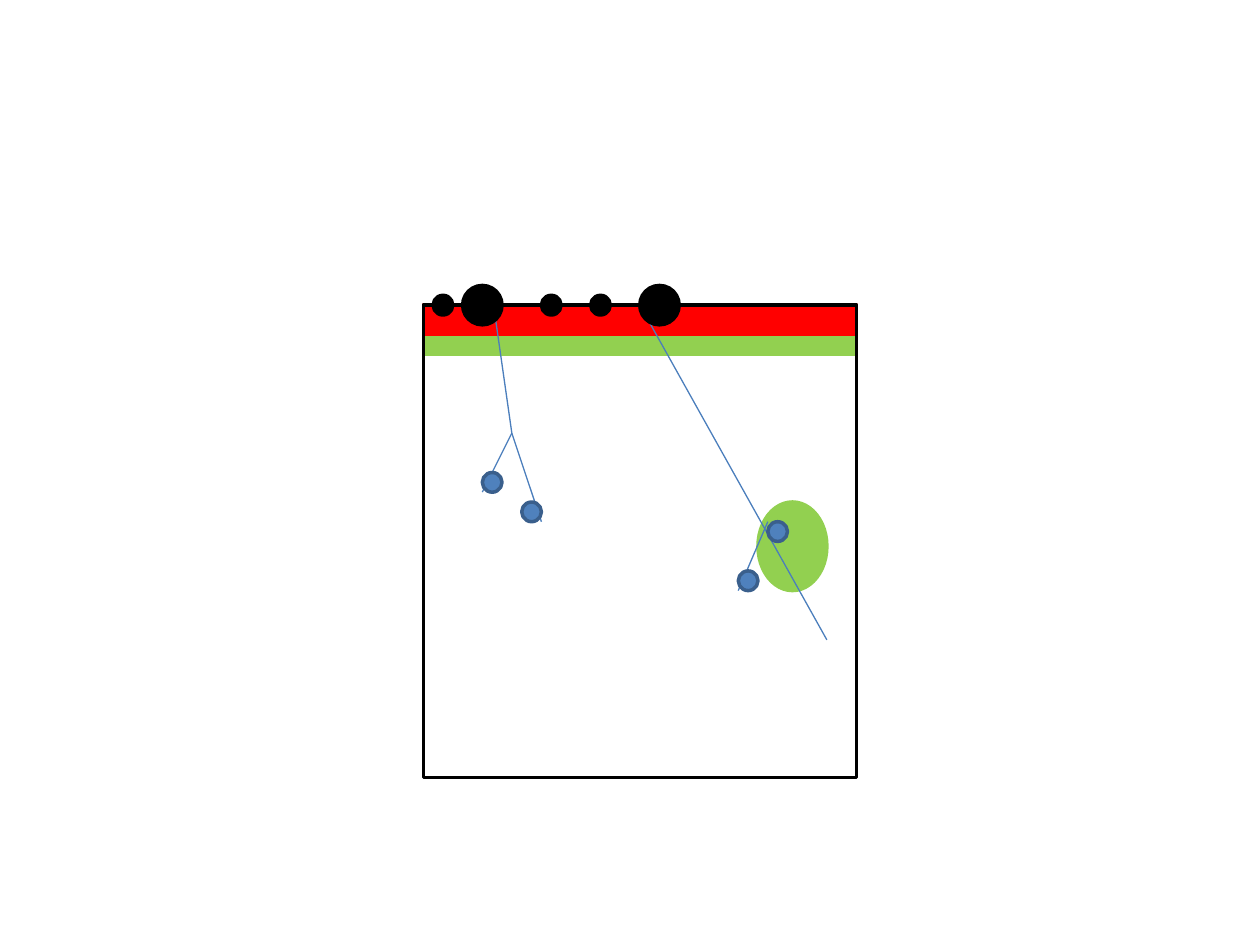
from pptx import Presentation
from pptx.dml.color import RGBColor
from pptx.enum.shapes import MSO_CONNECTOR, MSO_SHAPE
from pptx.oxml.ns import qn
from pptx.util import Inches, Pt
from lxml import etree

ELLIPSE = MSO_SHAPE.OVAL
RECTANGLE = MSO_SHAPE.RECTANGLE
STRAIGHT = MSO_CONNECTOR.STRAIGHT
BLANK_LAYOUT = 6

COLORS = {
    "green": "92D050",
    "red": "FF0000",
    "black": "000000",
    "branch": "4B7EBC",
    "node": "4F81BD",
    "node_edge": "3A5F8C",
}


class Sketch:
    """Draws on one page; positions are in cells of a 128 by 96 grid."""

    columns = 128
    outline_width = Pt(2)
    branch_width = Pt(0.75)

    def __init__(self, deck):
        self.page = deck.slides.add_slide(deck.slide_layouts[BLANK_LAYOUT])
        self.cell = deck.slide_width / self.columns

    def cells(self, *counts):
        return [round(count * self.cell) for count in counts]

    def color(self, name):
        return RGBColor.from_string(COLORS[name])

    def shape(self, kind, place, fill, edge=None):
        shape = self.page.shapes.add_shape(kind, *self.cells(*place))
        shape.shadow.inherit = False
        if fill:
            shape.fill.solid()
            shape.fill.fore_color.rgb = self.color(fill)
        else:
            shape.fill.background()
        shape.line.color.rgb = self.color(edge or fill)
        shape.line.width = self.outline_width

    def dot(self, column, row, size, fill, edge=None):
        self.shape(ELLIPSE, (column, row, size, size), fill, edge)

    def branch(self, start, end):
        line = self.page.shapes.add_connector(STRAIGHT, *self.cells(*start, *end))
        line.line.color.rgb = self.color("branch")
        line.line.width = self.branch_width
        etree.SubElement(line._element.spPr, qn("a:effectLst"))


def main():
    deck = Presentation()
    deck.slide_width, deck.slide_height = Inches(10), Inches(7.5)
    sketch = Sketch(deck)
    left, top, width, height = 43, 31, 44, 48

    # Green body and the two surface layers
    sketch.shape(ELLIPSE, (77, 51, 7, 9), "green")
    sketch.shape(RECTANGLE, (left, top + 3, width, 2), "green")
    sketch.shape(RECTANGLE, (left, top, width, 3), "red")

    # Branches below the surface
    fork = (52, 44)
    for start, end in [
        ((50, 30), fork),
        (fork, (49, 50)),
        (fork, (55, 53)),
        ((65, 31), (84, 65)),
        ((78, 53), (75, 60)),
    ]:
        sketch.branch(start, end)

    # Blue nodes on the branches
    for column, row in [(49, 48), (53, 51), (78, 53), (75, 58)]:
        sketch.dot(column, row, 2, "node", "node_edge")

    # Frame
    sketch.shape(RECTANGLE, (left, top, width, height), None, "black")

    # Black dots centred on the top edge
    for column, size in [(47, 4), (65, 4), (44, 2), (60, 2), (55, 2)]:
        sketch.dot(column, top - size / 2, size, "black")

    deck.save("out.pptx")


if __name__ == "__main__":
    main()
